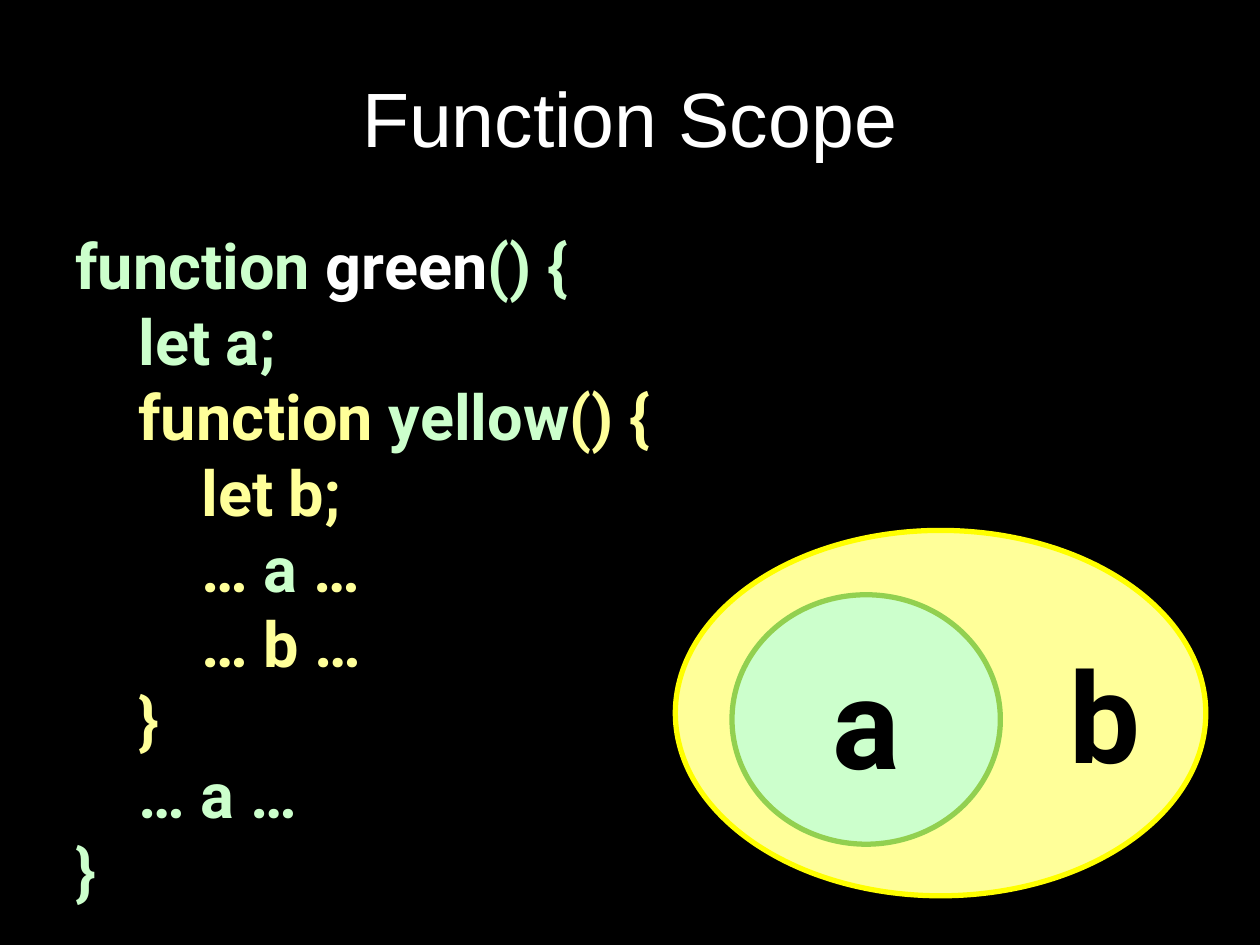
from pptx import Presentation
from pptx import util as u
from pptx.dml.color import RGBColor
from pptx.enum import shapes, text

WIDTH, HEIGHT = 10, 7.5
MARGIN = 0.05 * WIDTH
INDENT = 0.5  # inches per code level

BLACK, WHITE = "000000", "FFFFFF"
GREEN, YELLOW = "CCFFCC", "FFFF99"
GREEN_EDGE, YELLOW_EDGE = "92D050", "FFFF00"

# Each line: code level, then (words, colour) runs
CODE = [
    (0, [("function ", GREEN), ("green", WHITE), ("() {", GREEN)]),
    (1, [("let a;", GREEN)]),
    (1, [("function ", YELLOW), ("yellow", GREEN), ("() {", YELLOW)]),
    (2, [("let b;", YELLOW)]),
    (2, [("… ", YELLOW), ("a", GREEN), (" …", YELLOW)]),
    (2, [("… b …", YELLOW)]),
    (1, [("}", YELLOW)]),
    (1, [("… a …", GREEN)]),
    (0, [("}", GREEN)]),
]


def color(value):
    return RGBColor.from_string(value)


def box(left, top, width, height):
    return [u.Inches(length) for length in (left, top, width, height)]


def add_run(paragraph, words, size, fill, font="Roboto", bold=True):
    run = paragraph.add_run()
    run.text = words
    run.font.name = font
    run.font.size = u.Pt(size)
    run.font.bold = bold
    run.font.color.rgb = color(fill)


def set_title(slide, words):
    title = slide.shapes.title
    title.left, title.top, title.width, title.height = box(
        MARGIN, 0.04 * HEIGHT, WIDTH - 2 * MARGIN, HEIGHT / 6)
    title.text_frame.vertical_anchor = text.MSO_ANCHOR.MIDDLE
    paragraph = title.text_frame.paragraphs[0]
    paragraph.alignment = text.PP_ALIGN.CENTER
    add_run(paragraph, words, 44, WHITE, "Arial", False)


def add_code(slide, lines):
    shape = slide.shapes.add_textbox(*box(MARGIN, 1.75, WIDTH - 2 * MARGIN, 5.58))
    frame = shape.text_frame
    frame.word_wrap = True
    for index, (level, runs) in enumerate(lines):
        paragraph = frame.add_paragraph() if index else frame.paragraphs[0]
        # Code levels become left margins
        paragraph._p.get_or_add_pPr().set("marL", str(u.Inches(level * INDENT)))
        for words, fill in runs:
            add_run(paragraph, words, 36, fill)


def add_letter(shape, letter):
    paragraph = shape.text_frame.paragraphs[0]
    paragraph.alignment = text.PP_ALIGN.CENTER
    add_run(paragraph, letter, 72, BLACK)


def add_scope(slide, place, fill, edge):
    ellipse = slide.shapes.add_shape(shapes.MSO_SHAPE.OVAL, *box(*place))
    ellipse.shadow.inherit = False
    ellipse.fill.solid()
    ellipse.fill.fore_color.rgb = color(fill)
    ellipse.line.color.rgb = color(edge)
    ellipse.line.width = u.Pt(3)
    ellipse.text_frame.vertical_anchor = text.MSO_ANCHOR.MIDDLE
    return ellipse


def main():
    presentation = Presentation()
    presentation.slide_width = u.Inches(WIDTH)
    presentation.slide_height = u.Inches(HEIGHT)
    slide = presentation.slides.add_slide(presentation.slide_layouts[5])
    slide.background.fill.solid()
    slide.background.fill.fore_color.rgb = color(BLACK)

    set_title(slide, "Function Scope")
    add_code(slide, CODE)

    # Nested scopes: yellow sees b and everything in green
    add_scope(slide, (5.36, 4.21, 4.21, 2.9), YELLOW, YELLOW_EDGE)
    green = add_scope(slide, (5.81, 4.72, 2.13, 1.98), GREEN, GREEN_EDGE)
    add_letter(green, "a")
    label = slide.shapes.add_textbox(*box(8.39, 5.01, 0.76, 1.31))
    add_letter(label, "b")

    presentation.save("out.pptx")


if __name__ == "__main__":
    main()
